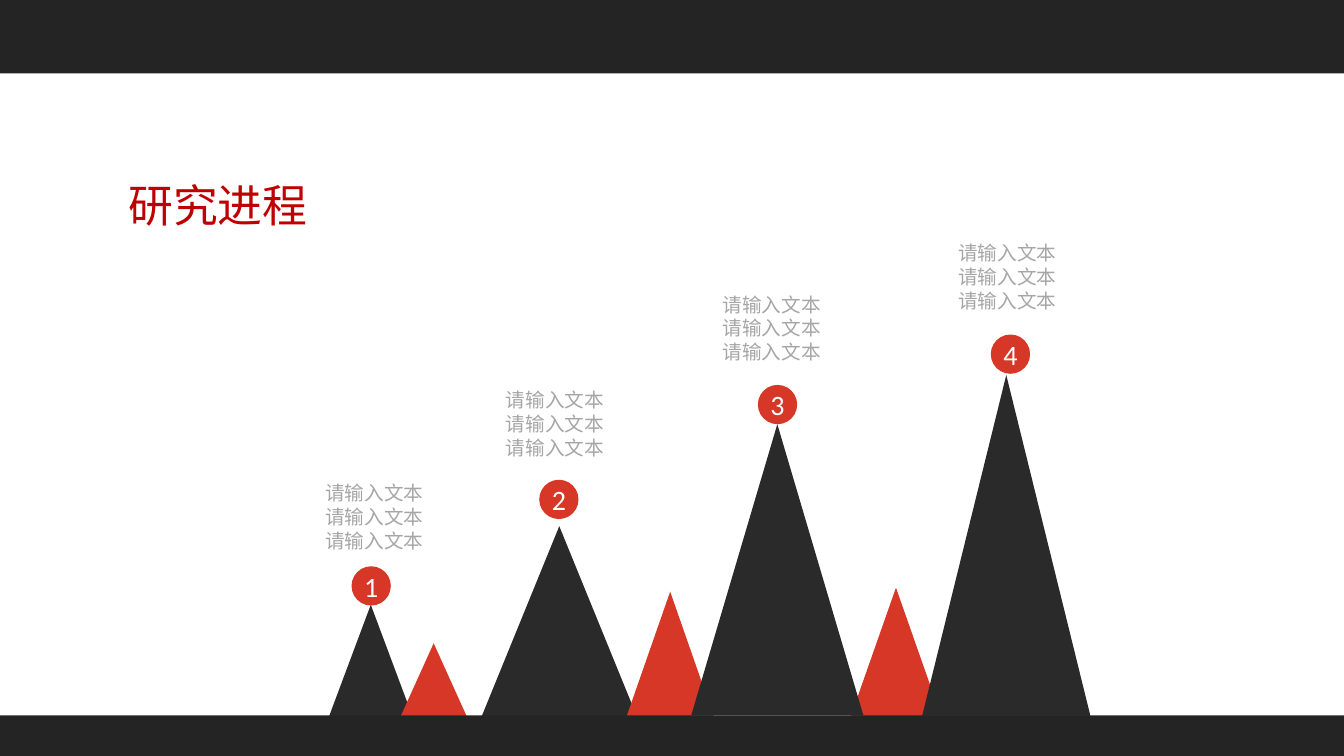
from dataclasses import dataclass

from lxml import etree
from pptx import Presentation
from pptx import util as u
from pptx.dml.color import RGBColor
from pptx.enum import shapes, text
from pptx.oxml import ns


@dataclass(frozen=True)
class Theme:
    bar: str = "242424"
    peak: str = "2B2A2A"
    accent: str = "D63726"
    title: str = "C00000"
    caption: str = "A6A6A6"
    number: str = "FFFFFF"
    title_font: str = "Noto Sans CJK JP"
    caption_font: str = "Noto Sans CJK SC"
    number_font: str = "Calibri"
    title_size: int = 32
    caption_size: int = 14
    caption_line: int = 17
    number_size: int = 20


THEME = Theme()
WIDTH, HEIGHT = 33.87, 19.05
HEADER_HEIGHT = 1.85
FLOOR_TOP = 18.03
BADGE_SIZE = 0.99
CAPTION_WIDTH, CAPTION_HEIGHT = 6.76, 2.06
CAPTION_LINES = ["请输入文本"] * 3

# Left, top, width, height in centimetres, from back to front
HILLS = [
    (THEME.peak, 8.10, 15.24, 2.49, 3.33),
    (THEME.accent, 10.08, 16.21, 1.70, 1.88),
    (THEME.accent, 21.41, 14.81, 2.34, 3.33),
    (THEME.peak, 12.01, 13.26, 4.17, 5.11),
    (THEME.accent, 15.72, 14.91, 2.34, 3.35),
    (THEME.peak, 17.42, 10.69, 4.34, 7.34),
]
LAST_PEAK = (THEME.peak, 23.24, 9.45, 4.24, 8.59)

# Badge left and top, caption left and top
STAGES = [
    (8.86, 14.27, 6.68, 11.99),
    (13.59, 12.09, 11.23, 9.65),
    (19.10, 9.70, 16.69, 7.24),
    (24.97, 8.43, 22.63, 5.94),
]


def add_filled(slide, kind, color, left, top, width, height):
    """Add a preset shape with a plain fill, no line and no shadow."""
    shape = slide.shapes.add_shape(
        kind, u.Cm(left), u.Cm(top), u.Cm(width), u.Cm(height))
    shape.shadow.inherit = False
    shape.fill.solid()
    shape.fill.fore_color.rgb = RGBColor.from_string(color)
    shape.line.fill.background()
    return shape


def add_run(paragraph, words, font_name, size, color):
    """Add a run whose font serves both Latin and East Asian text."""
    run = paragraph.add_run()
    run.text = words
    run.font.size = u.Pt(size)
    run.font.color.rgb = RGBColor.from_string(color)
    run.font.name = font_name
    latin = run.font._element.find(ns.qn("a:latin"))
    east_asian = etree.Element(ns.qn("a:ea"), typeface=font_name)
    latin.addnext(east_asian)


def add_centred_text(shape, words, font_name, size, color):
    frame = shape.text_frame
    frame.word_wrap = True
    frame.vertical_anchor = text.MSO_ANCHOR.MIDDLE
    frame.margin_left = frame.margin_right = 0
    frame.margin_top = frame.margin_bottom = 0
    paragraph = frame.paragraphs[0]
    paragraph.alignment = text.PP_ALIGN.CENTER
    add_run(paragraph, words, font_name, size, color)


def add_title(slide, words):
    box = slide.shapes.add_textbox(
        u.Cm(0.76), u.Cm(4.06), u.Cm(9.47), u.Cm(2.18))
    add_centred_text(
        box, words, THEME.title_font, THEME.title_size, THEME.title)


def add_hill(slide, color, left, top, width, height):
    add_filled(slide, shapes.MSO_SHAPE.ISOSCELES_TRIANGLE,
               color, left, top, width, height)


def add_bar(slide, top, height):
    add_filled(slide, shapes.MSO_SHAPE.RECTANGLE,
               THEME.bar, 0, top, WIDTH, height)


def add_badge(slide, number, left, top):
    badge = add_filled(slide, shapes.MSO_SHAPE.OVAL, THEME.accent,
                       left, top, BADGE_SIZE, BADGE_SIZE)
    add_centred_text(badge, str(number), THEME.number_font,
                     THEME.number_size, THEME.number)


def add_caption(slide, lines, left, top):
    box = slide.shapes.add_textbox(
        u.Cm(left), u.Cm(top), u.Cm(CAPTION_WIDTH), u.Cm(CAPTION_HEIGHT))
    frame = box.text_frame
    frame.word_wrap = True
    frame.auto_size = text.MSO_AUTO_SIZE.SHAPE_TO_FIT_TEXT
    for index, line in enumerate(lines):
        paragraph = frame.add_paragraph() if index else frame.paragraphs[0]
        paragraph.level = 1
        paragraph.line_spacing = u.Pt(THEME.caption_line)
        add_run(paragraph, line, THEME.caption_font,
                THEME.caption_size, THEME.caption)


def main():
    presentation = Presentation()
    presentation.slide_width = u.Cm(WIDTH)
    presentation.slide_height = u.Cm(HEIGHT)
    slide = presentation.slides.add_slide(presentation.slide_layouts[6])

    for hill in HILLS:
        add_hill(slide, *hill)
    add_bar(slide, 0, HEADER_HEIGHT)
    add_title(slide, "研究进程")
    add_bar(slide, FLOOR_TOP, HEIGHT - FLOOR_TOP)
    add_hill(slide, *LAST_PEAK)

    for number, stage in enumerate(STAGES, start=1):
        badge_left, badge_top, caption_left, caption_top = stage
        add_badge(slide, number, badge_left, badge_top)
        add_caption(slide, CAPTION_LINES, caption_left, caption_top)

    presentation.save("out.pptx")


if __name__ == "__main__":
    main()
